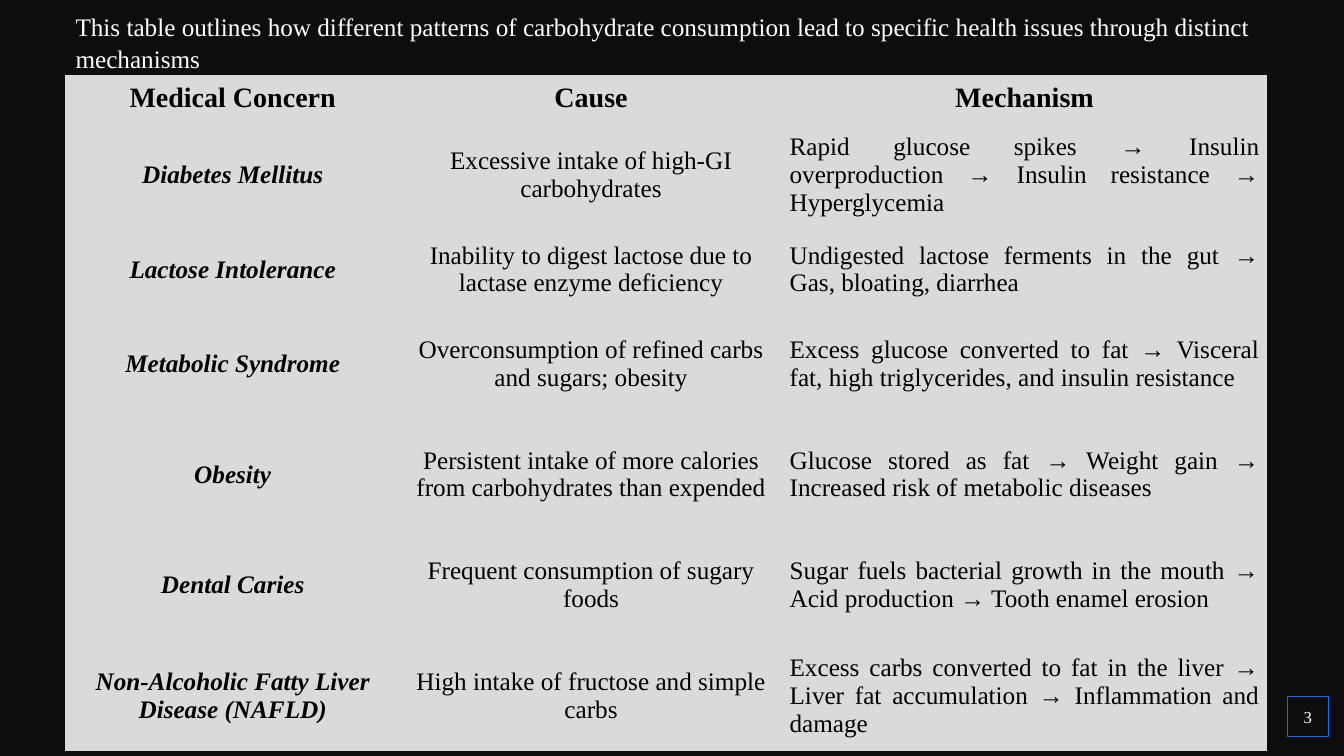
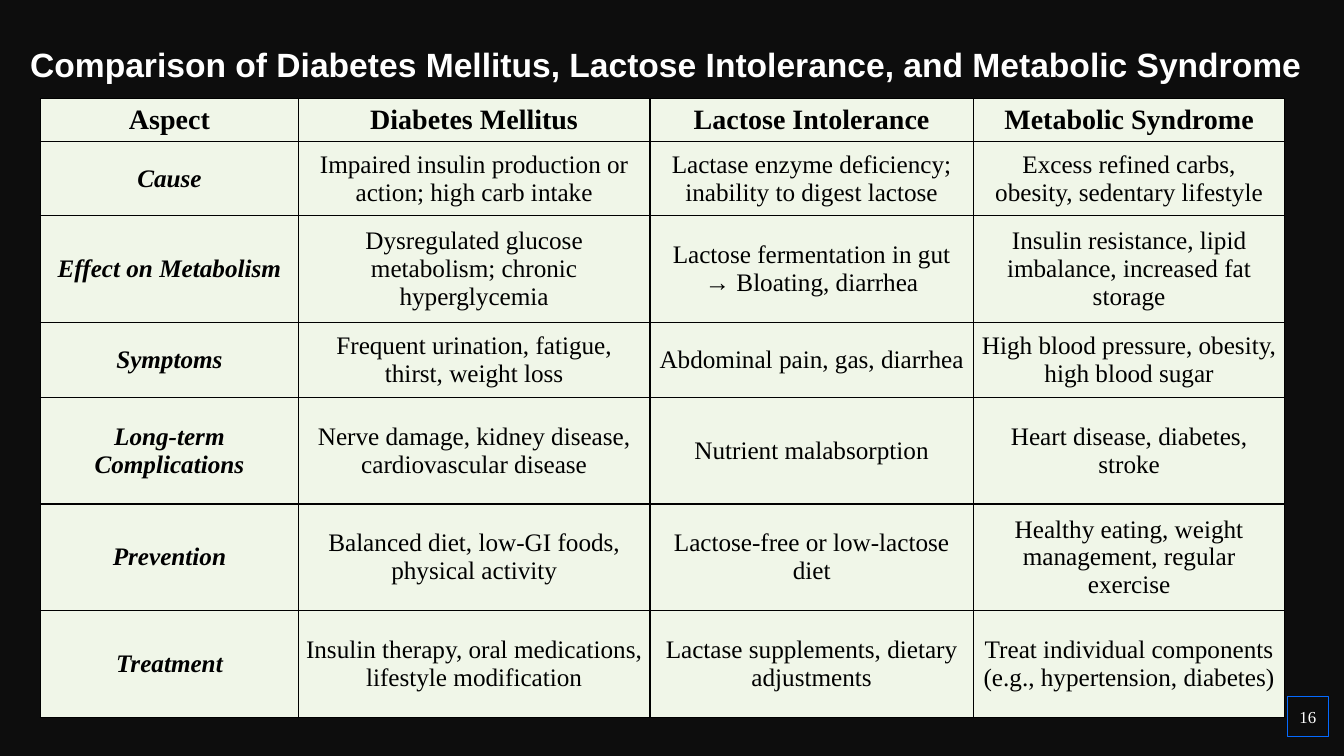
from pptx import Presentation
from pptx.dml.color import RGBColor
from pptx.enum.shapes import MSO_SHAPE
from pptx.enum.text import MSO_ANCHOR, MSO_AUTO_SIZE, PP_ALIGN
from pptx.oxml.ns import qn
from pptx.util import Cm, Pt
from lxml.etree import SubElement

COLORS = {
    "night": "0D0D0D",
    "white": "FFFFFF",
    "black": "000000",
    "blue": "056AFF",
    "gray": "DADADA",
    "mint": "F0F6E8",
}
SERIF = "Times New Roman"
SANS = "Arial"
TITLE_ONLY = 5

CONCERNS = [
    ("Medical Concern", "Cause", "Mechanism"),
    ("Diabetes Mellitus", "Excessive intake of high-GI carbohydrates",
     "Rapid glucose spikes → Insulin overproduction → Insulin resistance → Hyperglycemia"),
    ("Lactose Intolerance", "Inability to digest lactose due to lactase enzyme deficiency",
     "Undigested lactose ferments in the gut → Gas, bloating, diarrhea"),
    ("Metabolic Syndrome", "Overconsumption of refined carbs and sugars; obesity",
     "Excess glucose converted to fat → Visceral fat, high triglycerides, and insulin resistance"),
    ("Obesity", "Persistent intake of more calories from carbohydrates than expended",
     "Glucose stored as fat → Weight gain → Increased risk of metabolic diseases"),
    ("Dental Caries", "Frequent consumption of sugary foods",
     "Sugar fuels bacterial growth in the mouth → Acid production → Tooth enamel erosion"),
    ("Non-Alcoholic Fatty Liver Disease (NAFLD)", "High intake of fructose and simple carbs",
     "Excess carbs converted to fat in the liver → Liver fat accumulation → "
     "Inflammation and damage"),
]
ASPECTS = [
    ("Aspect", "Diabetes Mellitus", "Lactose Intolerance", "Metabolic Syndrome"),
    ("Cause", "Impaired insulin production or action; high carb intake",
     "Lactase enzyme deficiency; inability to digest lactose",
     "Excess refined carbs, obesity, sedentary lifestyle"),
    ("Effect on Metabolism", "Dysregulated glucose metabolism; chronic hyperglycemia",
     "Lactose fermentation in gut → Bloating, diarrhea",
     "Insulin resistance, lipid imbalance, increased fat storage"),
    ("Symptoms", "Frequent urination, fatigue, thirst, weight loss",
     "Abdominal pain, gas, diarrhea",
     "High blood pressure, obesity, high blood sugar"),
    ("Long-term Complications", "Nerve damage, kidney disease, cardiovascular disease",
     "Nutrient malabsorption", "Heart disease, diabetes, stroke"),
    ("Prevention", "Balanced diet, low-GI foods, physical activity",
     "Lactose-free or low-lactose diet",
     "Healthy eating, weight management, regular exercise"),
    ("Treatment", "Insulin therapy, oral medications, lifestyle modification",
     "Lactase supplements, dietary adjustments",
     "Treat individual components (e.g., hypertension, diabetes)"),
]


def rgb(name):
    return RGBColor.from_string(COLORS[name])


def write(frame, text, size, color, font=SERIF, align=PP_ALIGN.CENTER,
          bold=False, italic=False):
    para = frame.paragraphs[0]
    para.alignment = align
    run = para.add_run()
    run.text = text
    face = run.font
    face.name, face.size = font, Pt(size)
    face.bold, face.italic = bold, italic
    face.color.rgb = rgb(color)
    return para


def edge(cell, color):
    """Draw all four cell borders, or clear them when color is None."""
    props = cell._tc.get_or_add_tcPr()
    for tag in ("a:lnL", "a:lnR", "a:lnT", "a:lnB"):
        line = SubElement(props, qn(tag), w=str(Pt(1)))
        if color:
            fill = SubElement(line, qn("a:solidFill"))
            SubElement(fill, qn("a:srgbClr"), val=COLORS[color])
        else:
            SubElement(line, qn("a:noFill"))


def add_grid(slide, left, top, cols, rows, data, fill, border=None,
             last=PP_ALIGN.CENTER):
    """Place a table; last aligns the body cells of the final column."""
    table = slide.shapes.add_table(
        len(rows), len(cols), Cm(left), Cm(top), Cm(sum(cols)), Cm(sum(rows))).table
    table.first_row = table.horz_banding = False
    for col, width in zip(table.columns, cols):
        col.width = Cm(width)
    for row, height in zip(table.rows, rows):
        row.height = Cm(height)
    for r, texts in enumerate(data):
        for c, text in enumerate(texts):
            cell = table.cell(r, c)
            cell.margin_left = cell.margin_right = Cm(0.19)
            cell.margin_top = cell.margin_bottom = Cm(0.1)
            cell.vertical_anchor = MSO_ANCHOR.MIDDLE
            edge(cell, border)
            cell.fill.solid()
            cell.fill.fore_color.rgb = rgb(fill)
            head = r == 0
            ends = not head and c == len(cols) - 1
            write(cell.text_frame, text, 20 if head else 18, "black",
                  align=last if ends else PP_ALIGN.CENTER,
                  bold=head or c == 0, italic=not head and c == 0)


def set_title(slide, box, anchor, wrap):
    title = slide.shapes.title
    title.left, title.top, title.width, title.height = map(Cm, box)
    frame = title.text_frame
    frame.auto_size = MSO_AUTO_SIZE.NONE
    frame.vertical_anchor = anchor
    frame.word_wrap = wrap
    return frame


def add_page(slide, number):
    box = slide.shapes.add_shape(
        MSO_SHAPE.RECTANGLE, Cm(32.44), Cm(17.55), Cm(1.04), Cm(1.02))
    box.shadow.inherit = False
    box.fill.background()
    box.line.color.rgb = rgb("blue")
    box.line.width = Pt(0.75)
    frame = box.text_frame
    frame.margin_left = frame.margin_right = frame.margin_top = frame.margin_bottom = 0
    frame.vertical_anchor = MSO_ANCHOR.MIDDLE
    write(frame, str(number), 12, "white")


def new_slide(deck, number):
    slide = deck.slides.add_slide(deck.slide_layouts[TITLE_ONLY])
    add_page(slide, number)
    return slide


def concern_slide(deck):
    slide = new_slide(deck, 3)
    frame = set_title(slide, (1.65, 0.1, 30.94, 1.8), MSO_ANCHOR.TOP, True)
    para = write(frame, "This table outlines how different patterns of carbohydrate "
                 "consumption lead to specific health issues through distinct mechanisms",
                 18, "white", align=PP_ALIGN.LEFT)
    para.line_spacing = 1.07
    add_grid(slide, 1.65, 1.9, [8.43, 9.63, 12.22], [1.12, 2.79, 1.96] + [2.79] * 4,
             CONCERNS, "gray", last=PP_ALIGN.JUSTIFY)


def aspect_slide(deck):
    slide = new_slide(deck, 16)
    frame = set_title(slide, (0.36, 0.97, 32.84, 1.27), MSO_ANCHOR.MIDDLE, False)
    write(frame, "Comparison of Diabetes Mellitus, Lactose Intolerance, "
          "and Metabolic Syndrome", 24, "white", SANS, bold=True)
    add_grid(slide, 1.02, 2.49, [6.5, 8.86, 8.15, 7.85],
             [1.07, 1.88, 2.69, 1.88] + [2.69] * 3, ASPECTS, "mint", "black")


def main():
    deck = Presentation()
    deck.slide_width, deck.slide_height = Cm(33.87), Cm(19.05)
    back = deck.slide_master.background.fill
    back.solid()
    back.fore_color.rgb = rgb("night")
    concern_slide(deck)
    aspect_slide(deck)
    deck.save("out.pptx")


if __name__ == "__main__":
    main()
